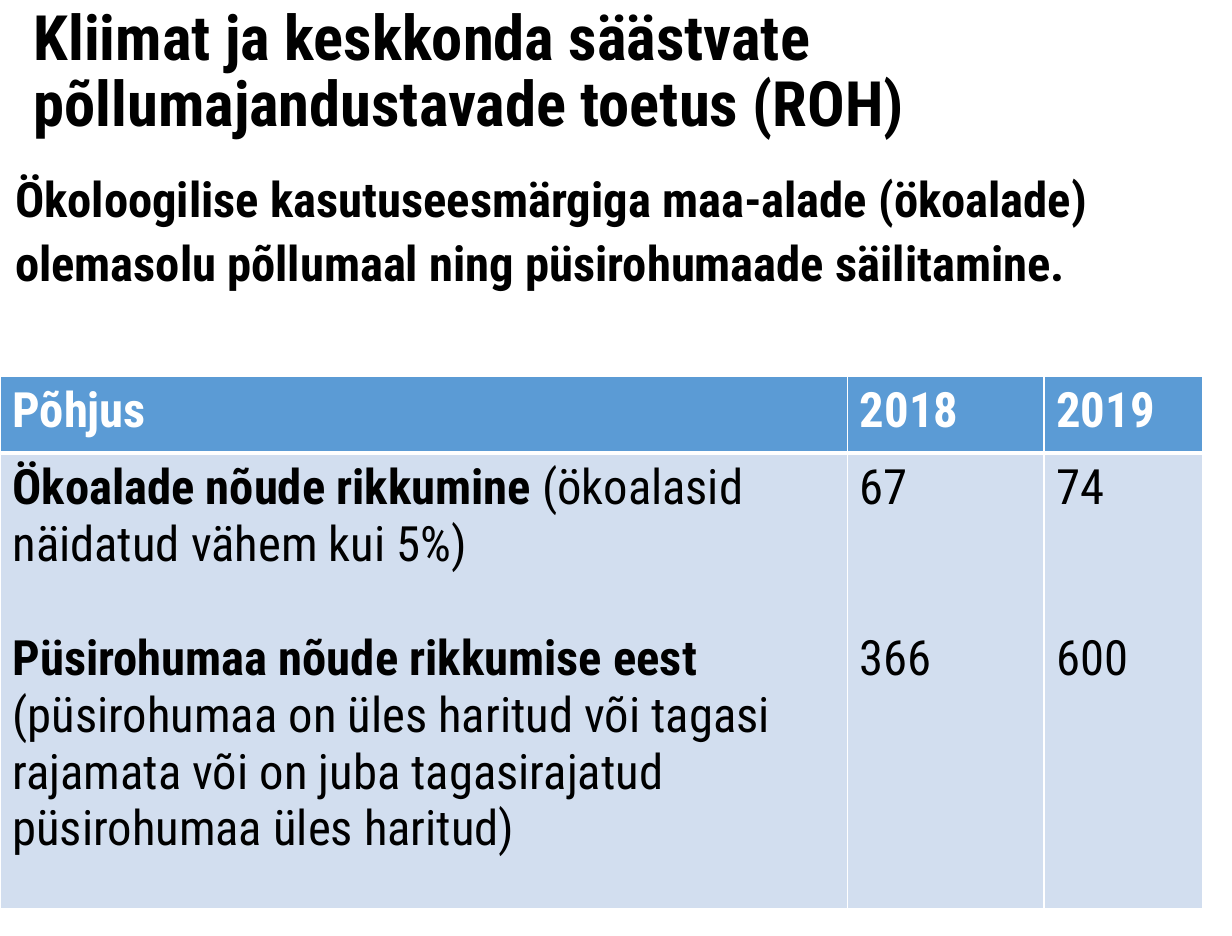
from lxml import etree
from pptx import Presentation
from pptx import util as u
from pptx.dml.color import RGBColor
from pptx.enum import text
from pptx.oxml import ns

BLACK = RGBColor(0x00, 0x00, 0x00)
WHITE = RGBColor(0xFF, 0xFF, 0xFF)
HEADER_BLUE = RGBColor(0x5B, 0x9B, 0xD5)
ROW_BLUE = RGBColor(0xD2, 0xDE, 0xEF)
FONT = "Roboto Condensed"
TEXT_SIZE = 28
LINE_HEIGHT = 32.8
CM_PER_INCH = 2.54

HEADINGS = ["Põhjus", "2018", "2019"]
REASONS = [
    [("Ökoalade nõude rikkumine ", True),
     ("(ökoalasid näidatud vähem kui 5%)", False)],
    [("Püsirohumaa nõude rikkumise eest ", True),
     ("(püsirohumaa on üles haritud või tagasi rajamata või on juba "
      "tagasirajatud püsirohumaa üles haritud)", False)],
]
COUNTS = [["67", "366"], ["74", "600"]]


def set_values(target, values):
    """Set each named format value on the target."""
    for name, value in values.items():
        setattr(target, name, value)


def write_para(para, spans, size=TEXT_SIZE, color=BLACK, **layout):
    """Fill a paragraph with (words, bold) spans."""
    set_values(para, layout)
    for words, bold in spans:
        span = para.add_run()
        span.text = words
        set_values(span.font, {"name": FONT, "size": u.Pt(size), "bold": bold})
        span.font.color.rgb = color


def add_heading(page, box, words, size, spacing, top_inset=0):
    """Place one bold paragraph in a text box."""
    frame = page.shapes.add_textbox(*map(u.Inches, box)).text_frame
    set_values(frame, {
        "word_wrap": True, "vertical_anchor": text.MSO_ANCHOR.TOP,
        "margin_left": 0, "margin_right": 0, "margin_bottom": 0,
        "margin_top": u.Inches(top_inset),
    })
    write_para(frame.paragraphs[0], [(words, True)], size, line_spacing=spacing)


def add_border(cell, side, width):
    """Draw a white border on one side of a cell."""
    properties = cell._tc.get_or_add_tcPr()
    border = etree.Element(ns.qn(f"a:{side}"), w=str(u.Pt(width)))
    fill = etree.SubElement(border, ns.qn("a:solidFill"))
    etree.SubElement(fill, ns.qn("a:srgbClr"), val=str(WHITE))
    properties.insert(0, border)


def fill_cell(cell, paragraphs, fill, color=BLACK, gap_lines=0):
    """Write paragraphs in a cell, set apart by a number of lines."""
    cell.fill.solid()
    cell.fill.fore_color.rgb = fill
    frame = cell.text_frame
    for index, spans in enumerate(paragraphs):
        para = frame.add_paragraph() if index else frame.paragraphs[0]
        gap = u.Pt(gap_lines * LINE_HEIGHT if index else 0)
        write_para(para, spans, color=color, space_before=gap)


def add_violations(page, box):
    """Place the table of violations by reason and year."""
    grid = page.shapes.add_table(2, 3, *map(u.Inches, box)).table
    grid.horz_banding = False
    for column, width in zip(grid.columns, [6.77, 1.57, box[2] - 8.34]):
        column.width = u.Inches(width)
    for row, height in zip(grid.rows, [0.61, box[3] - 0.61]):
        row.height = u.Inches(height)
    for column, heading in enumerate(HEADINGS):
        cell = grid.cell(0, column)
        fill_cell(cell, [[(heading, True)]], HEADER_BLUE, WHITE)
        add_border(cell, "lnB", 3)
        add_border(grid.cell(1, column), "lnT", 3)
    fill_cell(grid.cell(1, 0), REASONS, ROW_BLUE, gap_lines=1)
    for column, counts in enumerate(COUNTS, 1):
        paragraphs = [[(count, False)] for count in counts]
        fill_cell(grid.cell(1, column), paragraphs, ROW_BLUE, gap_lines=2)


def main():
    """Build and save the slide."""
    deck = Presentation()
    deck.slide_width = u.Inches(25 / CM_PER_INCH)
    deck.slide_height = u.Inches(19 / CM_PER_INCH)
    page = deck.slides.add_slide(deck.slide_layouts[6])
    add_heading(page, (0.27, 0, 9.45, 1.06),
                "Kliimat ja keskkonda säästvate põllumajandustavade toetus (ROH)",
                36, 0.88, 0.06)
    add_heading(page, (0.12, 1.3, 9.72, 1.2),
                "Ökoloogilise kasutuseesmärgiga maa-alade (ökoalade) olemasolu "
                "põllumaal ning püsirohumaade säilitamine.", TEXT_SIZE, 1.1)
    add_violations(page, (0, 3.01, 9.61, 4.25))
    deck.save("out.pptx")


if __name__ == "__main__":
    main()
